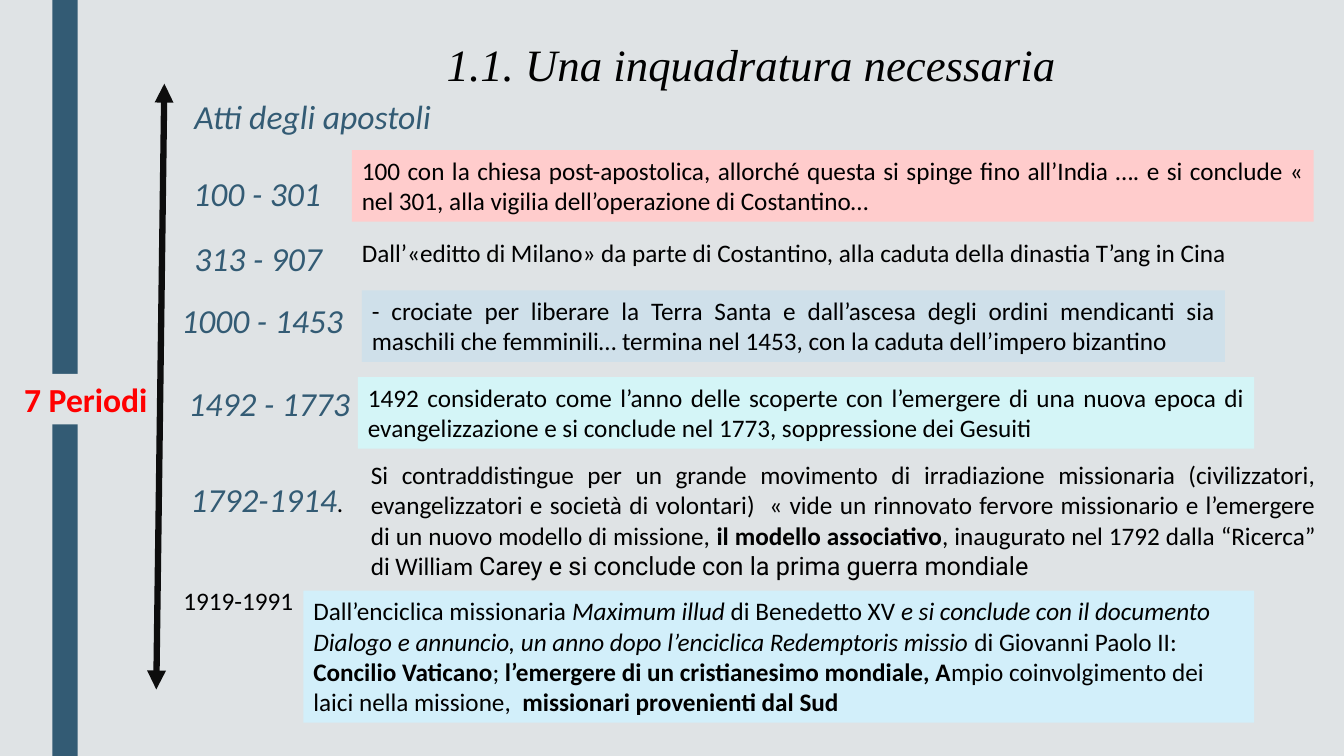
from dataclasses import dataclass
from typing import Optional

import lxml.etree
import pptx
import pptx.dml.color
import pptx.enum.shapes
import pptx.enum.text
import pptx.oxml.ns
import pptx.util

Inches = pptx.util.Inches
Pt = pptx.util.Pt
RGBColor = pptx.dml.color.RGBColor
Align = pptx.enum.text.PP_ALIGN
qn = pptx.oxml.ns.qn

BACKGROUND = RGBColor(0xDF, 0xE3, 0xE5)
SLATE = RGBColor(0x33, 0x5B, 0x74)
BLACK = RGBColor(0x00, 0x00, 0x00)
ARROW = RGBColor(0x0D, 0x0D, 0x0D)
RED = RGBColor(0xFF, 0x00, 0x00)
PINK = RGBColor(0xFF, 0xCC, 0xCC)
BLUE_GREY = RGBColor(0xCF, 0xE0, 0xEA)
AQUA = RGBColor(0xD4, 0xF5, 0xF7)
SKY = RGBColor(0xD2, 0xEF, 0xFA)


@dataclass(frozen=True)
class Run:
    text: str
    size: float = 18
    color: RGBColor = BLACK
    bold: bool = False
    italic: bool = False
    font: str = "Calibri"


@dataclass(frozen=True)
class Box:
    left: float
    top: float
    width: float
    height: float
    runs: tuple[Run, ...]
    fill: Optional[RGBColor] = None
    align: Align = Align.LEFT
    wrap: bool = True


def period(left: float, top: float, width: float, text: str, *extra: Run) -> Box:
    run = Run(text, 24, SLATE, italic=True)
    return Box(left, top, width, 0.5, (run, *extra), wrap=False)


BOXES = (
    Box(0.14, 3.71, 1.51, 0.5, (Run("7 Periodi", 24, RED, bold=True),), BACKGROUND, wrap=False),
    period(1.83, 0.9, 2.66, "Atti degli apostoli"),
    period(1.82, 1.67, 1.48, "100 - 301"),
    period(1.83, 2.31, 1.55, "313 - 907"),
    period(1.7, 2.93, 1.82, "1000 - 1453"),
    period(1.77, 3.75, 1.82, "1492 - 1773"),
    period(1.79, 4.7, 1.79, "1792-1914", Run(".")),
    Box(3.49, 1.49, 9.54, 0.71, (
        Run("100 con la chiesa post-apostolica, allorché questa si spinge fino all’India …. "
            "e si conclude « nel 301, alla vigilia dell’operazione di Costantino…"),
    ), PINK, Align.JUSTIFY),
    Box(3.49, 2.31, 9.44, 0.4, (
        Run("Dall’«editto di Milano» da parte di Costantino, "
            "alla caduta della dinastia T’ang in Cina"),
    )),
    Box(3.59, 2.88, 8.56, 0.71, (
        Run("- crociate per liberare la Terra Santa e dall’ascesa degli ordini mendicanti sia "
            "maschili che femminili… termina nel 1453, con la caduta dell’impero bizantino"),
    ), BLUE_GREY, Align.JUSTIFY),
    Box(3.55, 3.74, 8.89, 0.71, (
        Run("1492 considerato come l’anno delle scoperte con l’emergere di una nuova epoca di "
            "evangelizzazione e si conclude nel 1773, soppressione dei Gesuiti"),
    ), AQUA, Align.JUSTIFY),
    Box(3.58, 4.51, 9.57, 1.31, (
        Run("Si contraddistingue per un grande movimento di irradiazione missionaria "
            "(civilizzatori, evangelizzatori e società di volontari)  « vide un rinnovato "
            "fervore missionario e l’emergere di un nuovo modello di missione, "),
        Run("il modello associativo", bold=True),
        Run(", inaugurato nel 1792 dalla “Ricerca” di William "),
        Run("Carey e si conclude con la prima guerra mondiale", font="Roboto"),
    ), align=Align.JUSTIFY),
    Box(3.01, 5.86, 9.43, 1.31, (
        Run("Dall’enciclica missionaria "),
        Run("Maximum illud", italic=True),
        Run(" di Benedetto XV "),
        Run("e si conclude con il documento Dialogo e annuncio, un anno dopo "
            "l’enciclica Redemptoris missio ", italic=True),
        Run("di Giovanni Paolo II:  "),
        Run("Concilio Vaticano", bold=True),
        Run("; "),
        Run("l’emergere di un cristianesimo mondiale, A", bold=True),
        Run("mpio coinvolgimento dei laici nella missione,  "),
        Run("missionari provenienti dal Sud", bold=True),
    ), SKY),
    Box(1.72, 5.76, 1.3, 0.4, (Run("1919-1991"),), wrap=False),
)


def format_run(r, run: Run) -> None:
    r.font.name = run.font
    r.font.size = Pt(run.size)
    r.font.bold = run.bold
    r.font.italic = run.italic
    r.font.color.rgb = run.color


def add_box(slide, box: Box) -> None:
    at = [Inches(v) for v in (box.left, box.top, box.width, box.height)]
    sp = slide.shapes.add_textbox(*at)
    if box.fill is not None:
        sp.fill.solid()
        sp.fill.fore_color.rgb = box.fill
    tf = sp.text_frame
    tf.word_wrap = box.wrap
    p = tf.paragraphs[0]
    p.alignment = box.align
    for run in box.runs:
        r = p.add_run()
        r.text = run.text
        format_run(r, run)


def add_title(slide) -> None:
    sp = slide.shapes.title
    sp.left, sp.top, sp.width, sp.height = (Inches(v) for v in (3.83, 0.23, 6.81, 0.67))
    tf = sp.text_frame
    tf.text = "1. Una inquadratura necessaria"
    tf.word_wrap = False
    tf.auto_size = pptx.enum.text.MSO_AUTO_SIZE.NONE
    tf.vertical_anchor = pptx.enum.text.MSO_ANCHOR.TOP
    p = tf.paragraphs[0]
    p.alignment = Align.LEFT
    p.line_spacing = 1.15
    format_run(p.runs[0], Run("", 32, italic=True, font="Times New Roman"))
    pPr = p._p.get_or_add_pPr()
    pPr.set("marL", str(Inches(0.81)))
    pPr.set("indent", str(Inches(-0.31)))
    lxml.etree.SubElement(pPr, qn("a:buFont"), typeface="+mj-lt")
    lxml.etree.SubElement(pPr, qn("a:buAutoNum"), type="arabicPeriod")


def add_side_band(slide) -> None:
    sp = slide.shapes.add_shape(
        pptx.enum.shapes.MSO_SHAPE.RECTANGLE, Inches(0.52), 0, Inches(0.25), Inches(7.5))
    sp.shadow.inherit = False
    sp.fill.solid()
    sp.fill.fore_color.rgb = SLATE
    sp.line.fill.background()


def add_time_arrow(slide) -> None:
    cx = slide.shapes.add_connector(
        pptx.enum.shapes.MSO_CONNECTOR.STRAIGHT,
        Inches(1.63), Inches(0.83), Inches(1.55), Inches(6.84))
    cx.line.color.rgb = ARROW
    cx.line.width = Pt(4.5)
    ln = cx.line._get_or_add_ln()
    for end in ("a:headEnd", "a:tailEnd"):
        lxml.etree.SubElement(ln, qn(end), type="triangle")
    lxml.etree.SubElement(cx._element.spPr, qn("a:effectLst"))


def main() -> None:
    prs = pptx.Presentation()
    prs.slide_width = Inches(13.33)
    prs.slide_height = Inches(7.5)
    slide = prs.slides.add_slide(prs.slide_layouts[5])
    slide.background.fill.solid()
    slide.background.fill.fore_color.rgb = BACKGROUND
    add_side_band(slide)
    add_title(slide)
    for box in BOXES:
        add_box(slide, box)
    add_time_arrow(slide)
    prs.save("out.pptx")


if __name__ == "__main__":
    main()
